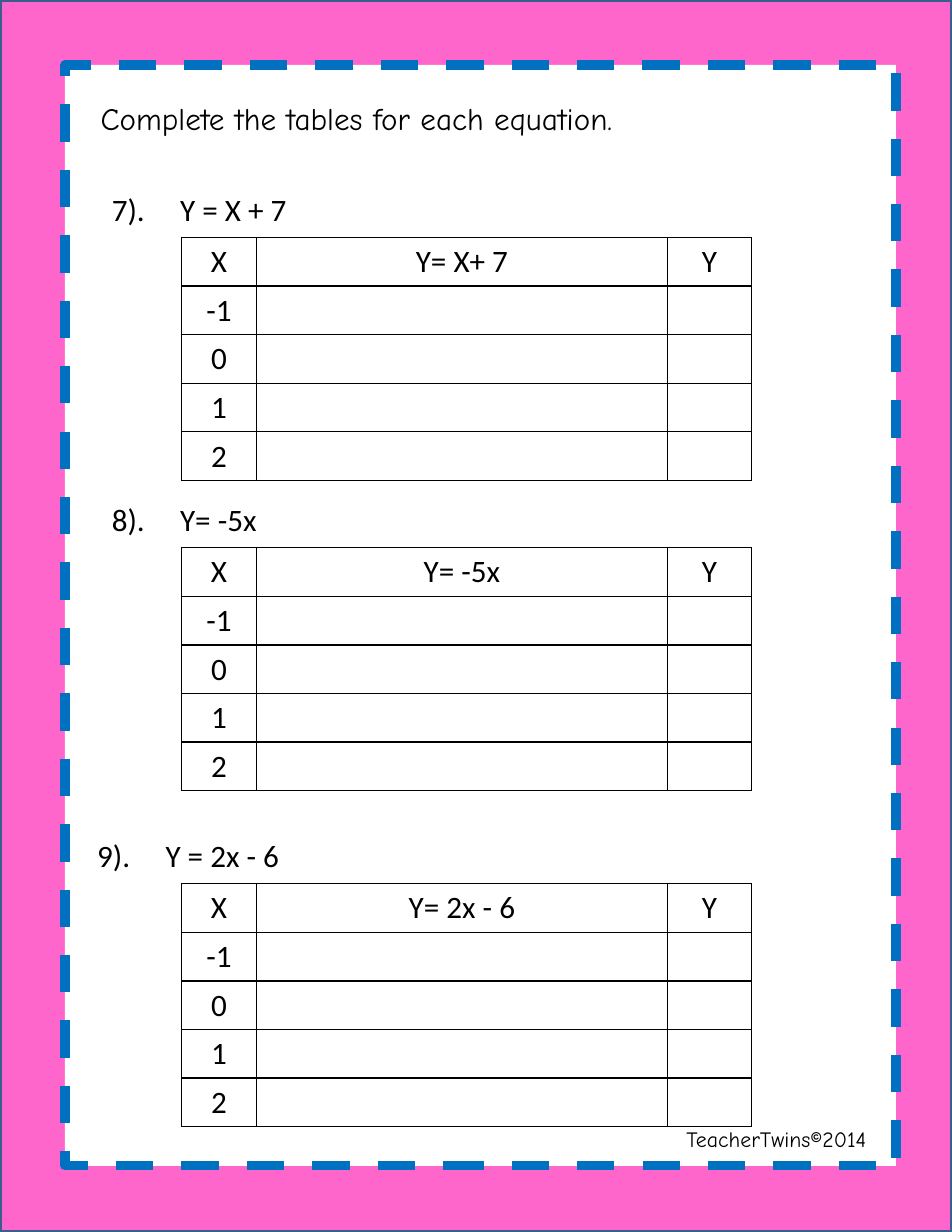
import pptx
import pptx.util
import pptx.dml.color
import pptx.enum.dml
import pptx.enum.shapes
import pptx.enum.text
from lxml import etree
from pptx.oxml.ns import qn

Inches = pptx.util.Inches
Pt = pptx.util.Pt
RGBColor = pptx.dml.color.RGBColor

PINK = RGBColor(0xFF, 0x66, 0xCC)
WHITE = RGBColor(0xFF, 0xFF, 0xFF)
BLUE = RGBColor(0x00, 0x70, 0xC0)
NAVY = RGBColor(0x3A, 0x5F, 0x8C)
BLACK = RGBColor(0x00, 0x00, 0x00)

BODY_FONT = "Calibri"
HAND_FONT = "Comic Neue"

TABLE_LEFT = 1.62
COLUMN_WIDTHS = (0.67, 3.67, 0.75)
ROW_HEIGHT = 0.43
X_VALUES = ("-1", "0", "1", "2")
EQUATION_TAB = 0.61

# number, equation, label left, label top, table heading, table top
PROBLEMS = (
    ("7).", "Y = X + 7", 0.9, 1.65, "Y= X+ 7", 2.12),
    ("8).", "Y= -5x", 0.9, 4.42, "Y= -5x", 4.89),
    ("9).", "Y = 2x - 6", 0.77, 7.42, "Y= 2x - 6", 7.89),
)


def add_panel(s, left, top, width, height, fill, line, line_width, dash=None):
    sp = s.shapes.add_shape(
        pptx.enum.shapes.MSO_SHAPE.RECTANGLE,
        Inches(left), Inches(top), Inches(width), Inches(height))
    sp.shadow.inherit = False
    sp.fill.solid()
    sp.fill.fore_color.rgb = fill
    sp.line.color.rgb = line
    sp.line.width = Pt(line_width)
    if dash is not None:
        sp.line.dash_style = dash


def add_run(p, text, font, size):
    r = p.add_run()
    r.text = text
    r.font.name = font
    r.font.size = Pt(size)
    r.font.color.rgb = BLACK


def add_text(s, left, top, width, height, text, font=BODY_FONT, size=20, tab=None):
    sp = s.shapes.add_textbox(Inches(left), Inches(top), Inches(width), Inches(height))
    tf = sp.text_frame
    tf.word_wrap = True
    p = tf.paragraphs[0]
    if tab is not None:
        tabs = etree.SubElement(p._p.get_or_add_pPr(), qn("a:tabLst"))
        etree.SubElement(tabs, qn("a:tab"), pos=str(Inches(tab)), algn="l")
    add_run(p, text, font, size)


def style_cell(cell):
    """Give a cell a thin black border on every side and no fill."""
    tc_pr = cell._tc.get_or_add_tcPr()
    for side in ("lnL", "lnR", "lnT", "lnB"):
        ln = etree.SubElement(tc_pr, qn(f"a:{side}"), w=str(Pt(1)))
        fill = etree.SubElement(ln, qn("a:solidFill"))
        etree.SubElement(fill, qn("a:srgbClr"), val=str(BLACK))
    cell.fill.background()


def add_value_table(s, top, heading):
    rows = [("X", heading, "Y")] + [(x, "", "") for x in X_VALUES]
    table = s.shapes.add_table(
        len(rows), len(COLUMN_WIDTHS), Inches(TABLE_LEFT), Inches(top),
        Inches(sum(COLUMN_WIDTHS)), Inches(ROW_HEIGHT * len(rows))).table
    table.first_row = False
    table.horz_banding = False
    for column, width in zip(table.columns, COLUMN_WIDTHS):
        column.width = Inches(width)
    for i, row in enumerate(rows):
        table.rows[i].height = Inches(ROW_HEIGHT)
        for j, text in enumerate(row):
            cell = table.cell(i, j)
            style_cell(cell)
            if text:
                p = cell.text_frame.paragraphs[0]
                p.alignment = pptx.enum.text.PP_ALIGN.CENTER
                add_run(p, text, BODY_FONT, 20)


def main():
    prs = pptx.Presentation()
    prs.slide_width = Inches(8.5)
    prs.slide_height = Inches(11)
    s = prs.slides.add_slide(prs.slide_layouts[6])

    add_panel(s, 0, 0, 8.5, 11, PINK, NAVY, 2)
    add_panel(s, 0.58, 0.58, 7.42, 9.83, WHITE, BLUE, 6,
              pptx.enum.dml.MSO_LINE.DASH)
    add_text(s, 0.8, 0.84, 6.5, 0.44,
             "Complete the tables for each equation.", HAND_FONT)
    for number, equation, left, label_top, heading, table_top in PROBLEMS:
        add_text(s, left, label_top, 3.4, 0.44, f"{number}\t{equation}",
                 tab=EQUATION_TAB)
        add_value_table(s, table_top, heading)
    add_text(s, 6.03, 10, 2.21, 0.34, "TeacherTwins©2014", HAND_FONT, 14)

    prs.save("out.pptx")


if __name__ == "__main__":
    main()
